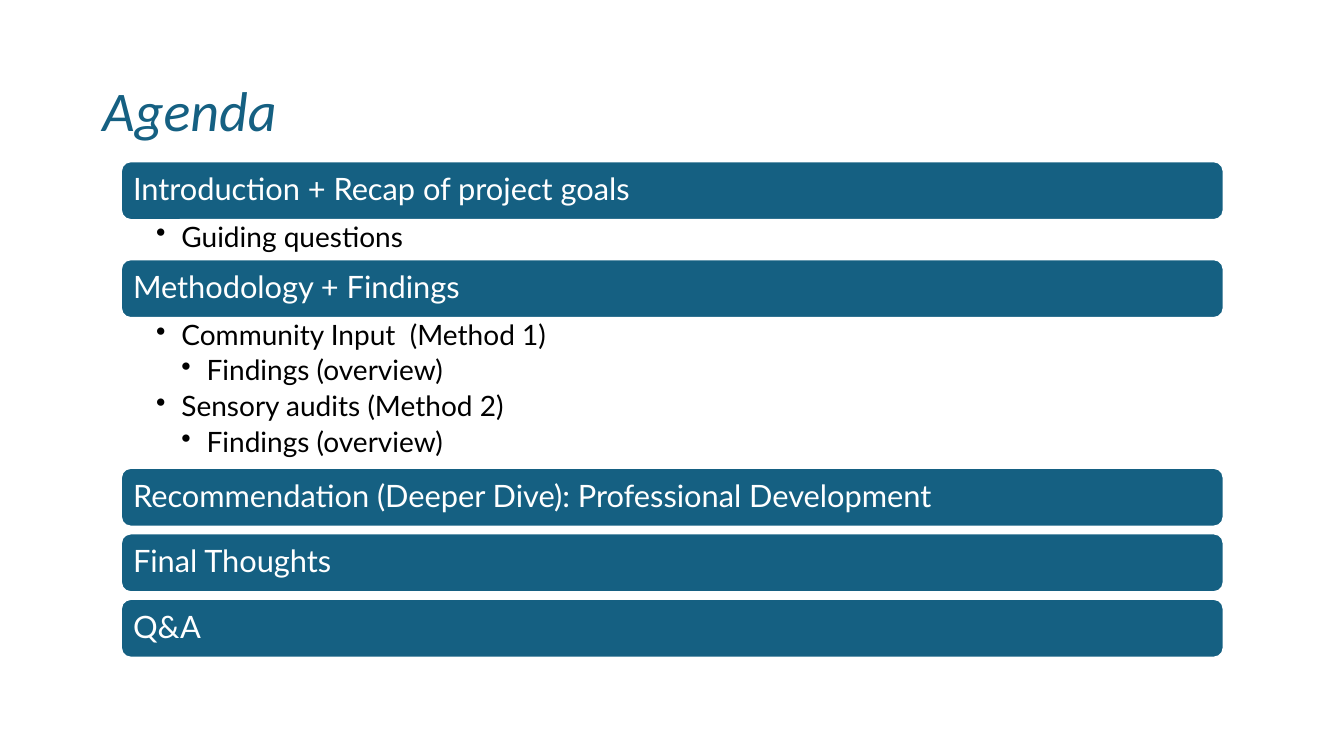
from pptx import Presentation
from pptx.dml.color import RGBColor
from pptx.enum.shapes import MSO_SHAPE as Shape
from pptx.enum.text import MSO_ANCHOR as Anchor, PP_ALIGN as Align
from pptx.oxml.ns import qn
from pptx.util import Pt
from lxml.etree import SubElement

BLUE, WHITE, BLACK = "156082", "FFFFFF", "000000"
LEFT, TOP, WIDTH = 86.4, 115.2, 787.7
BAR_HEIGHT, BAR_GAP = 42, 4.8
INDENT = 18

AGENDA = [
    ("Introduction + Recap of project goals", 28, [(1, "Guiding questions")]),
    ("Methodology + Findings", 107, [
        (1, "Community Input  (Method 1)"),
        (2, "Findings (overview)"),
        (1, "Sensory audits (Method 2)"),
        (2, "Findings (overview)"),
    ]),
    ("Recommendation (Deeper Dive): Professional Development", BAR_GAP, []),
    ("Final Thoughts", BAR_GAP, []),
    ("Q&A", BAR_GAP, []),
]


def color(hex_code):
    return RGBColor.from_string(hex_code)


def set_frame(frame, anchor, left, top, right, bottom):
    frame.word_wrap = True
    frame.vertical_anchor = anchor
    frame.margin_left, frame.margin_top = Pt(left), Pt(top)
    frame.margin_right, frame.margin_bottom = Pt(right), Pt(bottom)


def add_text(para, text, size, hex_code, font_name="Lato", italic=False):
    para.alignment = Align.LEFT
    para.line_spacing = 0.9
    span = para.add_run()
    span.text = text
    span.font.name = font_name
    span.font.size = Pt(size)
    span.font.italic = italic
    span.font.color.rgb = color(hex_code)


def add_bullet(para, level):
    para.level = level
    properties = para._p.get_or_add_pPr()
    properties.set("marL", str(Pt(INDENT * level)))
    properties.set("indent", str(-Pt(INDENT)))
    SubElement(properties, qn("a:buChar")).set("char", "•")


def set_title(page, text):
    title = page.shapes.title
    title.left, title.top = Pt(66), Pt(28.8)
    title.width, title.height = Pt(828), Pt(104.4)
    set_frame(title.text_frame, Anchor.MIDDLE, 7.2, 3.6, 7.2, 3.6)
    add_text(title.text_frame.paragraphs[0], text, 40, BLUE, "Calibri", True)


def add_bar(page, top, text):
    bar = page.shapes.add_shape(
        Shape.ROUNDED_RECTANGLE, Pt(LEFT), Pt(top), Pt(WIDTH), Pt(BAR_HEIGHT))
    bar.shadow.inherit = False
    bar.fill.solid()
    bar.fill.fore_color.rgb = color(BLUE)
    bar.line.color.rgb = color(WHITE)
    bar.line.width = Pt(1.5)
    set_frame(bar.text_frame, Anchor.MIDDLE, 6.6, 6.6, 6.6, 6.6)
    add_text(bar.text_frame.paragraphs[0], text, 22, WHITE)


def add_details(page, top, height, details):
    box = page.shapes.add_textbox(Pt(LEFT), Pt(top), Pt(WIDTH), Pt(height))
    frame = box.text_frame
    set_frame(frame, Anchor.TOP, 25.2, 2, 11.5, 2)
    for number, (level, text) in enumerate(details):
        para = frame.add_paragraph() if number else frame.paragraphs[0]
        add_text(para, text, 20, BLACK)
        para.space_before = Pt(0)
        para.space_after = Pt(4)
        add_bullet(para, level)


def main():
    deck = Presentation()
    deck.slide_width, deck.slide_height = Pt(960), Pt(540)
    page = deck.slides.add_slide(deck.slide_layouts[5])
    set_title(page, "Agenda")
    top = TOP
    for heading, space_below, details in AGENDA:
        add_bar(page, top, heading)
        top += BAR_HEIGHT
        if details:
            add_details(page, top, space_below, details)
        top += space_below
    deck.save("out.pptx")


if __name__ == "__main__":
    main()
